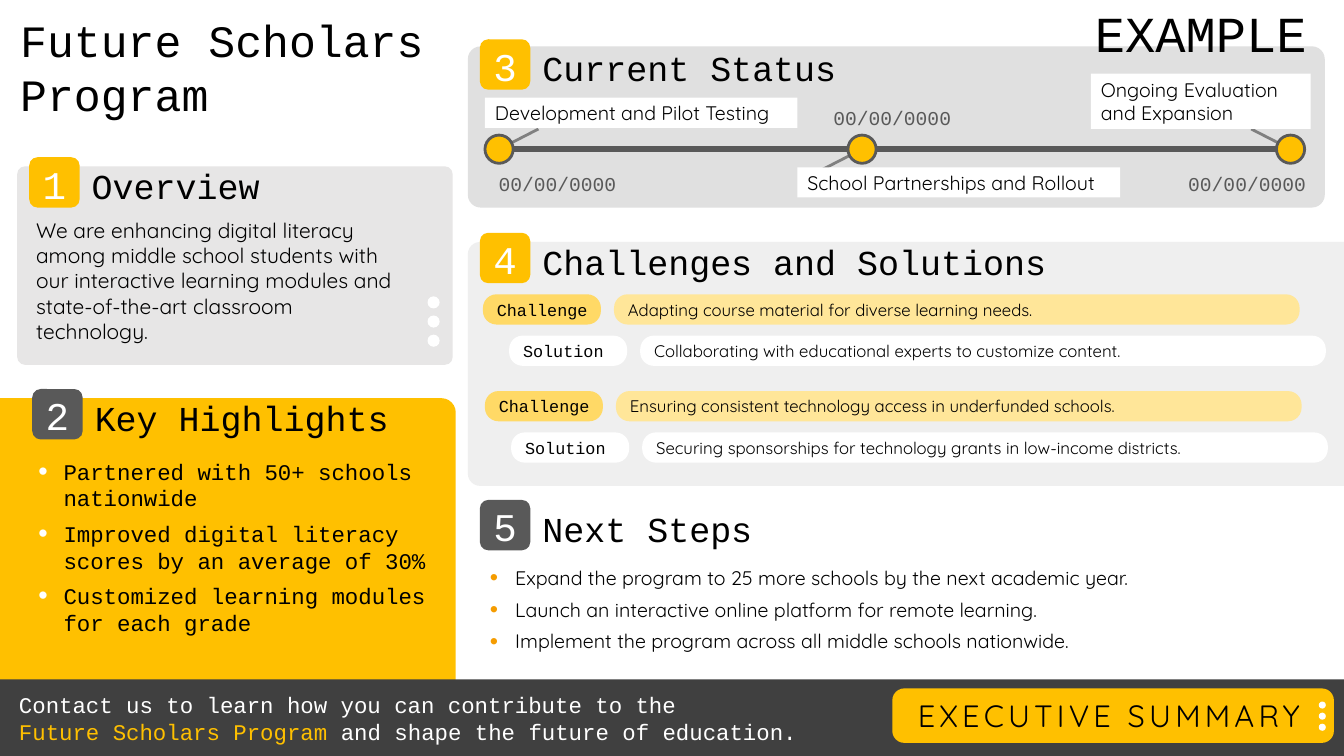
import dataclasses

import lxml.etree
import pptx
import pptx.dml.color
import pptx.enum.shapes
import pptx.enum.text
import pptx.oxml.ns
import pptx.util

SHAPE = pptx.enum.shapes.MSO_SHAPE
ALIGN = pptx.enum.text.PP_ALIGN
ANCHOR = pptx.enum.text.MSO_ANCHOR
CELL = pptx.util.Inches(0.1)


@dataclasses.dataclass(frozen=True)
class Theme:
    """Colours, fonts and type sizes of the slide."""
    mono: str = "Courier New"
    sans: str = "Quicksand"
    black: str = "000000"
    white: str = "FFFFFF"
    gold: str = "FFC000"
    amber: str = "FFD966"
    cream: str = "FFE699"
    orange: str = "F59C00"
    charcoal: str = "404040"
    slate: str = "595959"
    lead: str = "808080"
    overview: str = "E7E6E6"
    status: str = "E0E0E0"
    challenges: str = "EFEFEF"
    banner: int = 36
    title: int = 32
    number: int = 28
    heading: int = 25
    button: int = 22
    body: int = 16
    summary: int = 15
    label: int = 14
    pill: int = 12


THEME = Theme()


@dataclasses.dataclass(frozen=True)
class Box:
    """A rectangle measured in grid cells."""
    left: float
    top: float
    width: float
    height: float

    def inner(self, column, row, width, height):
        """Return a box offset from this one's corner."""
        return Box(self.left + column, self.top + row, width, height)

    def lengths(self):
        """Return the four lengths for python-pptx."""
        return [round(n * CELL) for n in (self.left, self.top, self.width, self.height)]


def colour(value):
    """Turn a hex string into a colour."""
    return pptx.dml.color.RGBColor.from_string(value)


def add_span(para, text, size, font, ink=THEME.black, tracking=0):
    """Add one formatted run."""
    span = para.add_run()
    span.text = text
    span.font.size = pptx.util.Pt(size)
    span.font.name = font
    span.font.color.rgb = colour(ink)
    if tracking:
        span._r.get_or_add_rPr().set("spc", str(tracking * 100))


def set_frame(frame, insets, anchor=ANCHOR.TOP):
    """Set wrapping, margins and anchor, and return the first paragraph."""
    frame.word_wrap = True
    frame.auto_size = pptx.enum.text.MSO_AUTO_SIZE.NONE
    frame.vertical_anchor = anchor
    frame.margin_left, frame.margin_top, frame.margin_right, frame.margin_bottom = [
        round(n * CELL) for n in insets]
    return frame.paragraphs[0]


def add_text(page, box, text, size, font, ink=THEME.black, align=ALIGN.LEFT,
             insets=(1, 0.5, 1, 0.5), anchor=ANCHOR.TOP):
    """Add a text box with one run."""
    para = set_frame(page.shapes.add_textbox(*box.lengths()).text_frame, insets, anchor)
    para.alignment = align
    add_span(para, text, size, font, ink)


def add_panel(page, kind, box, fill, corner=None, line=None):
    """Add a flat filled shape."""
    panel = page.shapes.add_shape(kind, *box.lengths())
    panel.shadow.inherit = False
    panel.fill.solid()
    panel.fill.fore_color.rgb = colour(fill)
    if line:
        panel.line.color.rgb = colour(line)
        panel.line.width = pptx.util.Pt(2)
    else:
        panel.line.fill.background()
    if corner is not None:
        panel.adjustments[0] = corner
    return panel


def add_line(page, start, end, ink, weight):
    """Add a straight connector between two grid points."""
    ends = [round(n * CELL) for n in (*start, *end)]
    line = page.shapes.add_connector(pptx.enum.shapes.MSO_CONNECTOR.STRAIGHT, *ends)
    line.line.color.rgb = colour(ink)
    line.line.width = pptx.util.Pt(weight)
    lxml.etree.SubElement(line.element.spPr, pptx.oxml.ns.qn("a:effectLst"))


def add_label(page, kind, box, text, size, font, fill, corner=None, insets=(1, 0, 0, 0)):
    """Add a filled shape with left-aligned text."""
    label = add_panel(page, kind, box, fill, corner)
    para = set_frame(label.text_frame, insets, ANCHOR.MIDDLE)
    para.alignment = ALIGN.LEFT
    add_span(para, text, size, font)


def add_heading(page, box, number, text, fill):
    """Add a numbered badge with its section heading."""
    badge = add_panel(page, SHAPE.ROUNDED_RECTANGLE, box.inner(0, 0, 5, 5), fill)
    para = set_frame(badge.text_frame, (0, 0.2, 0, 0), ANCHOR.MIDDLE)
    para.alignment = ALIGN.CENTER
    add_span(para, number, THEME.number, THEME.mono, THEME.white, -3)
    add_text(page, box.inner(6.2, 1.05, 58, 3.6), text, THEME.heading, THEME.mono,
             insets=(0, 0, 0, 0), anchor=ANCHOR.MIDDLE)


def add_dots(page, box, pitch):
    """Stack three white dots, the first filling the box."""
    for row in range(3):
        dot = box.inner(0, row * pitch, box.width, box.height)
        add_panel(page, SHAPE.OVAL, dot, THEME.white)


def move_placeholder(holder, box):
    """Bring a placeholder to the front and fit it to the box."""
    holder.left, holder.top, holder.width, holder.height = box.lengths()
    holder.element.getparent().append(holder.element)


def fill_list(holder, box, items, size, font, bullet):
    """Write a bulleted list into a body placeholder."""
    move_placeholder(holder, box)
    frame = holder.text_frame
    set_frame(frame, (1, 0.5, 1, 0.5))
    for index, item in enumerate(items):
        para = frame.add_paragraph() if index else frame.paragraphs[0]
        para.space_before = pptx.util.Pt(0)
        para.space_after = pptx.util.Pt(6)
        props = para._p.get_or_add_pPr()
        props.set("marL", str(round(2.5 * CELL)))
        props.set("indent", str(round(-2.5 * CELL)))
        tint = lxml.etree.SubElement(props, pptx.oxml.ns.qn("a:buClr"))
        for tag, key, value, parent in (("srgbClr", "val", bullet, tint),
                                        ("buSzPct", "val", "120000", props),
                                        ("buFont", "typeface", "Arial", props),
                                        ("buChar", "char", "•", props)):
            lxml.etree.SubElement(parent, pptx.oxml.ns.qn("a:" + tag)).set(key, value)
        add_span(para, item, size, font)


def build_title(page, box):
    """Place the programme title and the example mark."""
    title = page.shapes.title
    move_placeholder(title, box.inner(2, 1.3, 40.4, 12.6))
    para = set_frame(title.text_frame, (0, 0, 0, 0))
    para.alignment = ALIGN.LEFT
    add_span(para, "Future Scholars Program", THEME.title, THEME.mono)
    add_text(page, box.inner(108.6, 0.2, 22.7, 5.5), "EXAMPLE", THEME.banner, THEME.mono,
             insets=(0, 0, 0, 0))


def build_overview(page, box):
    """Draw the overview card."""
    add_panel(page, SHAPE.ROUNDED_RECTANGLE, box, THEME.overview, 0.04)
    add_text(page, box.inner(0.9, 4.6, 38.9, 13.6),
             "We are enhancing digital literacy among middle school students with our "
             "interactive learning modules and state-of-the-art classroom technology.",
             THEME.summary, THEME.sans)
    add_heading(page, box.inner(1.2, -0.9, 0, 0), "1", "Overview", THEME.gold)
    add_dots(page, box.inner(40.7, 12.9, 1.2, 1.2), 1.9)


def build_highlights(page, box, holder):
    """Draw the key highlights panel."""
    add_panel(page, SHAPE.ROUND_1_RECTANGLE, box, THEME.gold, 0.04)
    add_heading(page, box.inner(3.2, -0.9, 0, 0), "2", "Key Highlights", THEME.slate)
    fill_list(holder, box.inner(2.8, 5.4, 41.1, 18.8),
              ("Partnered with 50+ schools nationwide",
               "Improved digital literacy scores by an average of 30%",
               "Customized learning modules for each grade"),
              THEME.body, THEME.mono, THEME.white)


def build_status(page, box):
    """Draw the timeline with its milestones."""
    add_panel(page, SHAPE.ROUNDED_RECTANGLE, box, THEME.status, 0.08)
    add_heading(page, box.inner(1.2, -0.7, 0, 0), "3", "Current Status", THEME.gold)
    milestones = (
        (3.1, (3.9, -2), "Development and Pilot Testing", (1.7, 5.1, 31, 3), (1.2, 12)),
        (39.1, (-3.9, 2), "School Partnerships and Rollout", (32.7, 12, 32, 3), (34.4, 5.4)),
        (81.6, (-3.9, -2), "Ongoing Evaluation and Expansion", (61.8, 2.7, 21.8, 5.5),
         (69.6, 12)))
    axis = box.top + 10.2
    for column, (across, down), text, place, date in milestones:
        middle = box.left + column
        add_line(page, (middle, axis), (middle + across, axis + down), THEME.lead, 2)
        add_label(page, SHAPE.RECTANGLE, box.inner(*place), text, THEME.label, THEME.sans,
                  THEME.white, insets=(1, 0, 1, 0))
        add_text(page, box.inner(*date, 15.4, 3.4), "00/00/0000", THEME.label, THEME.mono,
                 THEME.slate, ALIGN.CENTER)
    add_line(page, (box.left + 3, axis), (box.left + 82.6, axis), THEME.slate, 4)
    for milestone in milestones:
        add_panel(page, SHAPE.OVAL, box.inner(milestone[0] - 1.4, 8.8, 2.8, 2.8),
                  THEME.gold, line=THEME.slate)


def build_challenges(page, box):
    """Draw the pairs of challenge and solution."""
    upright = box.inner((box.width - box.height) / 2, (box.height - box.width) / 2,
                        box.height, box.width)
    add_panel(page, SHAPE.ROUND_2_SAME_RECTANGLE, upright, THEME.challenges, 0.05).rotation = 270
    add_heading(page, box.inner(1.2, -0.9, 0, 0), "4", "Challenges and Solutions", THEME.gold)
    pairs = (("Adapting course material for diverse learning needs.",
              "Collaborating with educational experts to customize content."),
             ("Ensuring consistent technology access in underfunded schools.",
              "Securing sponsorships for technology grants in low-income districts."))
    kinds = (("Challenge", THEME.amber, THEME.cream), ("Solution", THEME.white, THEME.white))
    for group, pair in enumerate(pairs):
        for step, ((name, tag, bar), text) in enumerate(zip(kinds, pair)):
            row = box.inner(1.5 + 0.2 * group + 2.6 * step, 5.2 + 9.6 * group + 4.1 * step, 0, 0)
            add_label(page, SHAPE.ROUNDED_RECTANGLE, row.inner(0, 0, 11.7, 3), name,
                      THEME.pill, THEME.mono, tag, 0.45)
            add_label(page, SHAPE.ROUNDED_RECTANGLE, row.inner(13, 0, 68, 3), text,
                      THEME.pill, THEME.sans, bar, 0.45)


def build_next_steps(page, box, holder):
    """Place the next steps list under its heading."""
    add_heading(page, box, "5", "Next Steps", THEME.slate)
    fill_list(holder, box.inner(0, 6, 84.5, 9.8),
              ("Expand the program to 25 more schools by the next academic year.",
               "Launch an interactive online platform for remote learning.",
               "Implement the program across all middle schools nationwide."),
              THEME.label, THEME.sans, THEME.orange)


def build_footer(page, box):
    """Draw the contact bar and the summary button."""
    add_panel(page, SHAPE.RECTANGLE, box, THEME.charcoal)
    contact = page.shapes.add_textbox(*box.inner(0.9, 0.7, 83.6, 6.4).lengths())
    para = set_frame(contact.text_frame, (1, 0.5, 1, 0.5))
    style = (THEME.body, THEME.mono)
    add_span(para, "Contact us to learn how you can contribute to the ", *style, THEME.white)
    para.add_line_break()
    add_span(para, "Future Scholars Program ", *style, THEME.gold)
    add_span(para, "and shape the future of education.", *style, THEME.white)
    button = add_panel(page, SHAPE.ROUNDED_RECTANGLE, box.inner(88.5, 0.9, 43.8, 5.4),
                       THEME.gold, 0.22)
    para = set_frame(button.text_frame, (0, 0, 0.8, 0), ANCHOR.MIDDLE)
    para.alignment = ALIGN.CENTER
    add_span(para, "EXECUTIVE SUMMARY", THEME.button, THEME.sans, tracking=3)
    add_dots(page, box.inner(130.8, 2.2, 0.7, 0.7), 1.1)


def main():
    """Build and save the one-slide summary."""
    deck = pptx.Presentation()
    deck.slide_width, deck.slide_height = pptx.util.Inches(13.33), pptx.util.Inches(7.5)
    page = deck.slides.add_slide(deck.slide_layouts[3])
    highlights, steps = page.placeholders[1], page.placeholders[2]
    build_challenges(page, Box(46.4, 24, 86.9, 24.2))
    build_status(page, Box(46.4, 4.6, 85, 16))
    build_overview(page, Box(1.7, 16.5, 43.2, 19.7))
    build_highlights(page, Box(0, 39.5, 45.2, 35.5), highlights)
    build_next_steps(page, Box(47.6, 49.6, 84.5, 15.8), steps)
    build_footer(page, Box(0, 67.4, 133.3, 7.6))
    build_title(page, Box(0, 0, 133.3, 75))
    deck.save("out.pptx")


if __name__ == "__main__":
    main()
